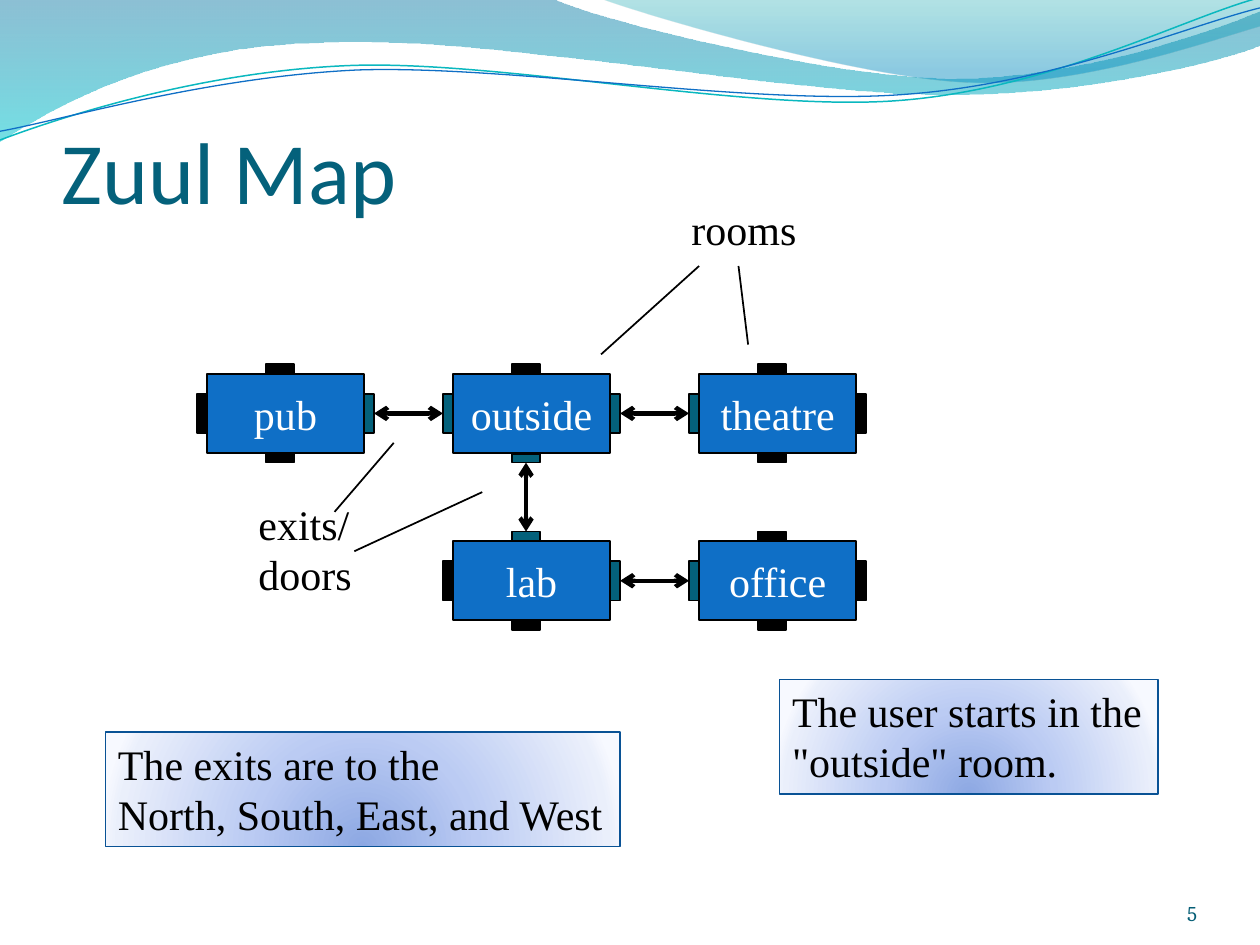
from lxml import etree
from pptx import Presentation
from pptx.dml.color import RGBColor
from pptx.enum.shapes import MSO_CONNECTOR, MSO_SHAPE
from pptx.enum.text import MSO_ANCHOR, MSO_AUTO_SIZE, PP_ALIGN
from pptx.oxml.ns import qn
from pptx.util import Pt

RECTANGLE = MSO_SHAPE.RECTANGLE
STRAIGHT = MSO_CONNECTOR.STRAIGHT
TOP, MIDDLE, BOTTOM = MSO_ANCHOR.TOP, MSO_ANCHOR.MIDDLE, MSO_ANCHOR.BOTTOM
LEFT, CENTER, RIGHT = PP_ALIGN.LEFT, PP_ALIGN.CENTER, PP_ALIGN.RIGHT
NO_AUTOFIT = MSO_AUTO_SIZE.NONE

BLACK, BLUE, TEAL = "000000", "0F6FC6", "04617B"
SERIF = "Times New Roman"


def paint(shape, fill=None, line=None, width=1, from_below=False):
    """Fill with a hex colour or (position, colour, opacity) stops, and outline."""
    shape.shadow.inherit = False
    if line:
        shape.line.color.rgb = RGBColor.from_string(line)
        shape.line.width = Pt(width)
    else:
        shape.line.fill.background()
    if fill is None:
        shape.fill.background()
    elif isinstance(fill, str):
        shape.fill.solid()
        shape.fill.fore_color.rgb = RGBColor.from_string(fill)
    else:
        shape.fill.gradient()
        gradient = shape.element.spPr.find(qn("a:gradFill"))
        gradient.clear()
        stops = etree.SubElement(gradient, qn("a:gsLst"))
        for position, value, opacity in fill:
            stop = etree.SubElement(stops, qn("a:gs"), pos=str(position * 1000))
            tint = etree.SubElement(stop, qn("a:srgbClr"), val=value)
            etree.SubElement(tint, qn("a:alpha"), val=str(opacity * 1000))
        if from_below:
            circle = etree.SubElement(gradient, qn("a:path"), path="circle")
            etree.SubElement(circle, qn("a:fillToRect"),
                             l="50000", t="130000", r="50000", b="-30000")
        else:
            etree.SubElement(gradient, qn("a:lin"), ang="5400000", scaled="1")


def write(shape, text, size=24, font=SERIF, color=BLACK, align=LEFT,
          anchor=TOP, wrap=True):
    frame = shape.text_frame
    frame.text = text
    frame.word_wrap = wrap
    frame.auto_size = NO_AUTOFIT
    frame.vertical_anchor = anchor
    for para in frame.paragraphs:
        para.alignment = align
        for span in para.runs:
            span.font.size = Pt(size)
            span.font.name = font
            span.font.color.rgb = RGBColor.from_string(color)


deck = Presentation()
deck.slide_width, deck.slide_height = Pt(720), Pt(540)
slide = deck.slides.add_slide(deck.slide_layouts[5])
shapes = slide.shapes

# Waves: start point, then straight (2 numbers) or cubic (6 numbers) segments
waves = [
    ([(0, 0), (317, 0), (343, 12, 478, 45, 546, 45), (614, 45, 690, 19, 720, 6.5),
      (720, 26), (708, 32, 626, 55, 537, 54), (448, 54, 275, 20, 185, 24.5),
      (93, 26, 33, 60, 0, 81)],
     [(0, "0074A1", 45), (100, "00C6CF", 55)], None, 0),
    ([(345, 0), (366, 8, 491, 45, 554, 47), (616, 50, 692, 23, 720, 15), (720, 0)],
     [(0, "00A1A9", 30), (80, "008BBF", 45)], None, 0),
    ([(0, 80), (34.5, 67, 114, 41, 199, 37.5), (284, 34, 427, 64, 513, 57.5),
      (600, 51, 675, 11, 718.5, -1)], None, "0AB8BF", 0.85),
    ([(0, 75), (34, 69, 118, 44, 204, 40), (290, 37, 430, 60.5, 516, 54),
      (602, 48, 677.5, 15, 720, 4.5)], None, BLUE, 0.75),
]
for (start, *segments), fill, line, width in waves:
    builder = shapes.build_freeform(Pt(start[0]), Pt(start[1]))
    for segment in segments:
        points = zip(segment[::2], segment[1::2])
        builder.add_line_segments([(Pt(x), Pt(y)) for x, y in points],
                                  close=fill is not None and segment is segments[-1])
    wave = builder.convert_to_shape()
    paint(wave, fill, line, width)
    # Merge the three points of each cubic segment into one curve
    steps = iter(list(wave.element.iter(qn("a:lnTo"))))
    for segment in segments:
        step = next(steps)
        if len(segment) == 6:
            step.tag = qn("a:cubicBezTo")
            step.extend([next(steps)[0], next(steps)[0]])
    for step in list(wave.element.iter(qn("a:lnTo"))):
        if len(step) == 0:
            step.getparent().remove(step)

title = shapes.title
title.left, title.top, title.width, title.height = Pt(35), Pt(37), Pt(648), Pt(90)
write(title, "Zuul Map", 50, "Calibri", TEAL, anchor=BOTTOM)
frame = title.text_frame
frame.margin_left = frame.margin_right = frame.margin_bottom = 0
title.element.getparent().append(title.element)  # in front of the waves

# Rooms on a grid: column, row and the sides with an open door
rooms = {
    "outside": (1, 0, "east west south"),
    "theatre": (2, 0, "west"),
    "pub": (0, 0, "east"),
    "lab": (1, 1, "north east"),
    "office": (2, 1, "west"),
}
door_places = {
    "east": (90, 11.25, 5.62, 22.5),
    "west": (-5.62, 11.25, 5.62, 22.5),
    "north": (33.75, -5.62, 16.2, 5.06),
    "south": (33.75, 45.56, 16.2, 5.06),
}
doors = {}
for name, (column, row, exits) in rooms.items():
    left, top = 118.12 + 140.62 * column, 213.75 + 95.62 * row
    group = shapes.add_group_shape()
    room = group.shapes.add_shape(RECTANGLE, Pt(left), Pt(top), Pt(90), Pt(45))
    paint(room, BLUE, BLACK)
    write(room, name, color="FFFFFF", align=CENTER, anchor=MIDDLE)
    for side, (dx, dy, width, height) in door_places.items():
        door = group.shapes.add_shape(RECTANGLE, Pt(left + dx), Pt(top + dy),
                                      Pt(width), Pt(height))
        paint(door, TEAL if side in exits else BLACK, BLACK)
        doors[name, side] = door

sites = {"north": 0, "west": 1, "south": 2, "east": 3}
passages = [
    (("outside", "east"), ("theatre", "west")),
    (("pub", "east"), ("outside", "west")),
    (("outside", "south"), ("lab", "north")),
    (("lab", "east"), ("office", "west")),
]
connectors = []
for begin, end in passages:
    passage = shapes.add_connector(STRAIGHT, 0, 0, 0, 0)
    passage.begin_connect(doors[begin], sites[begin[1]])
    passage.end_connect(doors[end], sites[end[1]])
    connectors.append((passage, 2.5))

pointers = [
    (399.5, 152, 343.5, 202.5),
    (422, 152, 427.5, 196.9),
    (225, 253.1, 191.2, 292.5),
    (275.6, 281.2, 202.5, 315),
]
for ends in pointers:
    pointer = shapes.add_connector(STRAIGHT, *[Pt(value) for value in ends])
    connectors.append((pointer, 1))

for connector, width in connectors:
    connector.line.color.rgb = RGBColor.from_string(BLACK)
    connector.line.width = Pt(width)
    properties = connector.element.spPr
    if width > 1:
        outline = properties.find(qn("a:ln"))
        for arrowhead in ("a:headEnd", "a:tailEnd"):
            etree.SubElement(outline, qn(arrowhead), type="arrow")
    etree.SubElement(properties, qn("a:effectLst"))

for text, left, top, height in [("rooms", 388, 112.5, 36.5),
                                ("exits/\ndoors", 140.6, 281.2, 65.5)]:
    label = shapes.add_textbox(Pt(left), Pt(top), Pt(84.4), Pt(height))
    write(label, text)

note_stops = [(0, "8DA8E3", 100), (43, "BBCBF3", 100),
              (93, "EAEFFB", 100), (100, "F7F9FF", 100)]
notes = [
    ('The user starts in the\n"outside" room.', 445.5, 388.2, 216.3),
    ("The exits are to the\nNorth, South, East, and West", 60.3, 418.3, 294),
]
for text, left, top, width in notes:
    note = shapes.add_shape(RECTANGLE, Pt(left), Pt(top), Pt(width), Pt(65.5))
    paint(note, note_stops, "095295", 0.75, from_below=True)
    write(note, text, wrap=False)

number = shapes.add_textbox(Pt(624), Pt(500.5), Pt(60), Pt(28.75))
write(number, "5", 12, "Cambria", "045D75", RIGHT, BOTTOM)
frame = number.text_frame
frame.margin_left = frame.margin_right = frame.margin_top = frame.margin_bottom = 0

deck.save("out.pptx")
